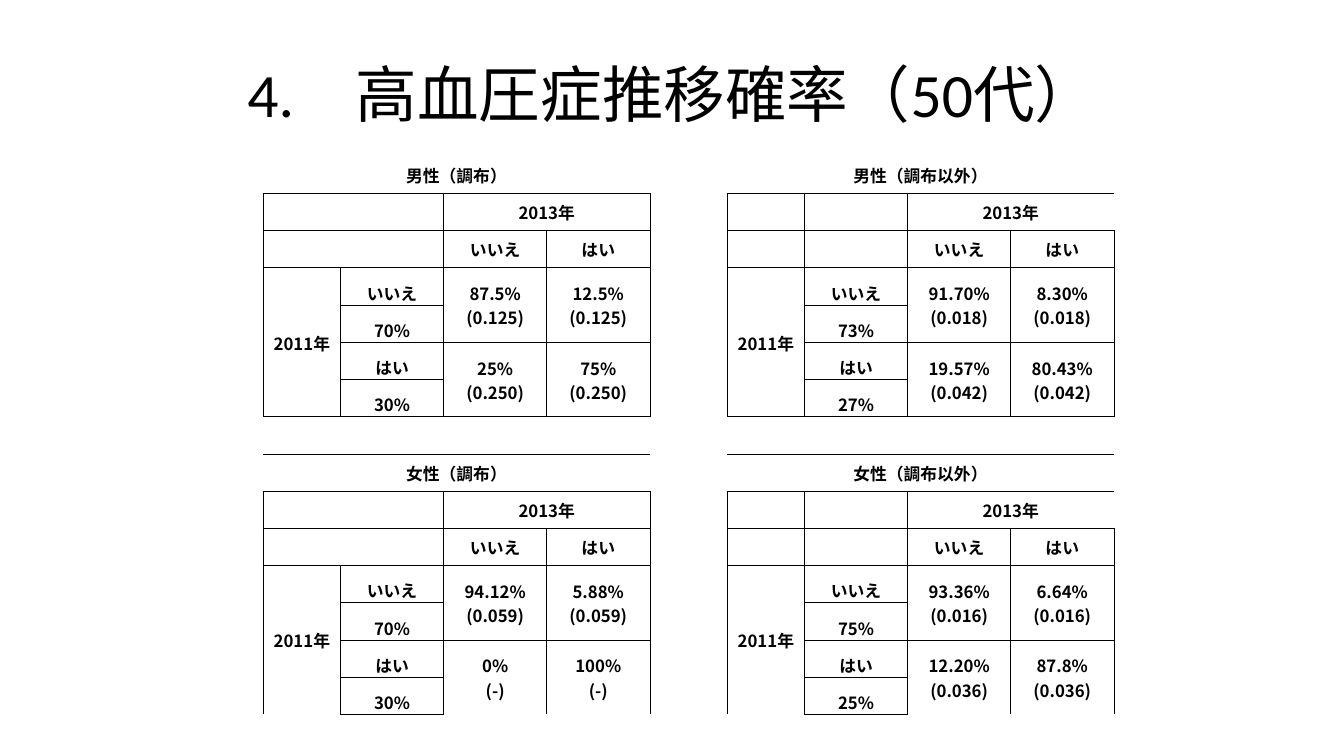
from lxml.etree import SubElement
from pptx import Presentation
from pptx.dml.color import RGBColor
from pptx.enum.text import MSO_ANCHOR as ANCHOR, PP_ALIGN as ALIGN
from pptx.oxml import parse_xml
from pptx.oxml.ns import nsdecls, qn
from pptx.util import Pt

# Content: heading, shares of no / yes in 2011, transitions (no row, yes row)
TITLE = "4.　高血圧症推移確率（50代）"
NO, YES = "いいえ", "はい"
GROUPS = [
    ("男性（調布）", "70%", "30%",
     ["87.5%\v(0.125)", "12.5%\v(0.125)", "25%\v(0.250)", "75%\v(0.250)"]),
    ("男性（調布以外）", "73%", "27%",
     ["91.70%\v(0.018)", "8.30%\v(0.018)", "19.57%\v(0.042)", "80.43%\v(0.042)"]),
    ("女性（調布）", "70%", "30%",
     ["94.12%\v(0.059)", "5.88%\v(0.059)", "0%\v(-)", "100%\v(-)"]),
    ("女性（調布以外）", "75%", "25%",
     ["93.36%\v(0.016)", "6.64%\v(0.016)", "12.20%\v(0.036)", "87.8%\v(0.036)"]),
]

# Layout
ROWS, ROW_H = 15, 26.6
NARROW, WIDE = 55.25, 73.65
COLS = [NARROW, WIDE, WIDE, WIDE, NARROW, NARROW, WIDE, WIDE, WIDE]
BLOCK_ROWS, BLOCK_COLS = 8, 5
CJK = "Noto Sans CJK JP"
NO_STYLE = "{2D5ABB26-0587-4C30-8999-92F81FD0307C}"


def rgb(value):
    return RGBColor.from_string(value)


def style(p, size, font, bold=False):
    p.alignment = ALIGN.CENTER
    f = p.font
    f.size, f.name, f.bold = Pt(size), font, bold
    f.color.rgb = rgb("000000")
    SubElement(p._p.pPr.find(qn("a:defRPr")), qn("a:ea"), typeface=CJK)


def block_regions(heading, no_share, yes_share, values):
    """Regions of one block: row, column, height, width, text, anchor."""
    mid, low = ANCHOR.MIDDLE, ANCHOR.BOTTOM
    regions = [(0, 0, 1, 4, heading, mid), (1, 0, 2, 2, "", mid),
               (1, 2, 1, 2, "2013年", mid), (2, 2, 1, 1, NO, mid),
               (2, 3, 1, 1, YES, mid), (3, 0, 4, 1, "2011年", mid)]
    for i, text in enumerate([NO, no_share, YES, yes_share]):
        regions.append((3 + i, 1, 1, 1, text, low))
    for i, text in enumerate(values):
        regions.append((3 + i // 2 * 2, 2 + i % 2, 2, 1, text, mid))
    return regions


def outline(edges, top, left, h, w):
    """Mark the rim of a region on the cells at both sides of each edge."""
    for r in range(top, top + h):
        edges |= {(r, left, "L"), (r, left - 1, "R"),
                  (r, left + w - 1, "R"), (r, left + w, "L")}
    for c in range(left, left + w):
        edges |= {(top, c, "T"), (top - 1, c, "B"),
                  (top + h - 1, c, "B"), (top + h, c, "T")}


prs = Presentation()
prs.slide_width, prs.slide_height = Pt(960), Pt(540)
s = prs.slides.add_slide(prs.slide_layouts[6])

# Title
tf = s.shapes.add_textbox(Pt(48), Pt(21.6), Pt(864), Pt(90)).text_frame
tf.word_wrap = True
tf.vertical_anchor = ANCHOR.MIDDLE
tf.text = TITLE
style(tf.paragraphs[0], 44, "Calibri")

# Table grid
frame = s.shapes.add_table(ROWS, len(COLS), Pt(188), Pt(111.5),
                           Pt(sum(COLS)), Pt(ROWS * ROW_H))
table = frame.table
table.first_row = table.horz_banding = False
table._tbl.tblPr.find(qn("a:tableStyleId")).text = NO_STYLE
for column, width in zip(table.columns, COLS):
    column.width = Pt(width)
for row in table.rows:
    row.height = Pt(ROW_H)

# Four blocks, two across and two down
edges = set()
for i, group in enumerate(GROUPS):
    top, left = i // 2 * BLOCK_ROWS, i % 2 * BLOCK_COLS
    for r, c, h, w, text, anchor in block_regions(*group):
        cell = table.cell(top + r, left + c)
        cell.text, cell.vertical_anchor = text, anchor
        if text and h * w > 1:
            cell.merge(table.cell(top + r + h - 1, left + c + w - 1))
        if r > 0:
            outline(edges, top + r, left + c, h, w)

# Text style and borders of every cell
for r in range(ROWS):
    for c in range(len(COLS)):
        cell = table.cell(r, c)
        cell.margin_left = cell.margin_right = cell.margin_top = Pt(0.75)
        cell.margin_bottom = Pt(0)
        cell.fill.background()
        style(cell.text_frame.paragraphs[0], 12, CJK, bold=True)
        sides = [side for side in "LRTB" if (r, c, side) in edges]
        for n, side in enumerate(sides):
            cell._tc.tcPr.insert(n, parse_xml(
                f'<a:ln{side} {nsdecls("a")} w="6350"><a:solidFill>'
                f'<a:srgbClr val="000000"/></a:solidFill></a:ln{side}>'))

prs.save("out.pptx")
